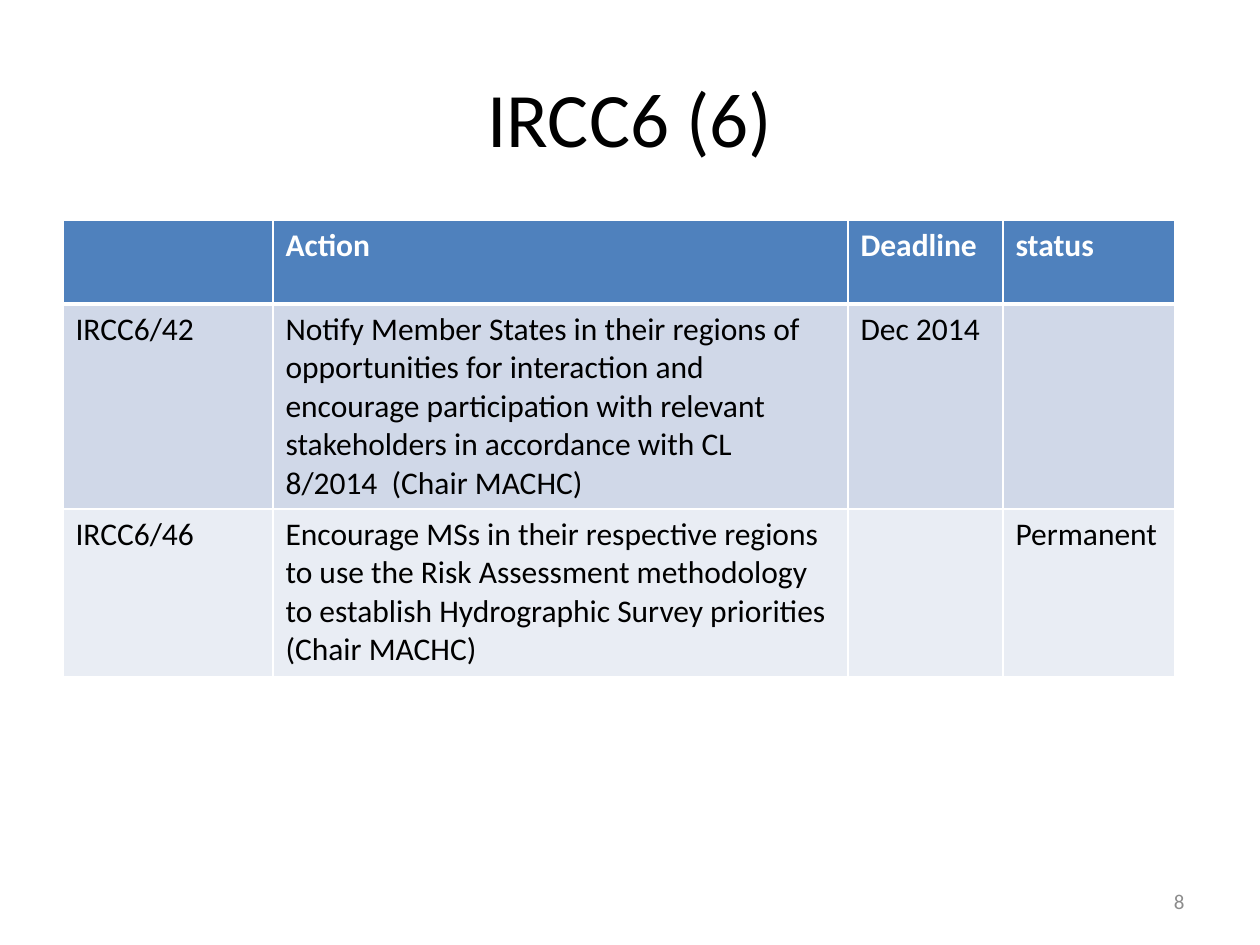
import pptx
import pptx.util
import pptx.dml.color
import pptx.enum.text
import pptx.oxml
import pptx.oxml.ns

RGB = pptx.dml.color.RGBColor
ALIGN = pptx.enum.text.PP_ALIGN
MIDDLE = pptx.enum.text.MSO_ANCHOR.MIDDLE
PX = 914400 / 126

BLACK = RGB(0x00, 0x00, 0x00)
WHITE = RGB(0xFF, 0xFF, 0xFF)
GREY = RGB(0x8C, 0x8C, 0x8C)
HEADER_BLUE = RGB(0x4F, 0x81, 0xBD)
BANDS = [RGB(0xD0, 0xD8, 0xE8), RGB(0xE9, 0xED, 0xF4)]

COL_WIDTHS = [210, 575, 155, 172]
ROW_HEIGHTS = [84, 205, 168]
ROWS = [
    ["", "Action", "Deadline", "status"],
    ["IRCC6/42",
     "Notify Member States in their regions of opportunities for interaction "
     "and encourage participation with relevant\n"
     "stakeholders in accordance with CL\n"
     "8/2014  (Chair MACHC)",
     "Dec 2014", ""],
    ["IRCC6/46",
     "Encourage MSs in their respective regions to use the Risk Assessment "
     "methodology to establish Hydrographic Survey priorities\n"
     "(Chair MACHC)",
     "", "Permanent"],
]


def px(n):
    return pptx.util.Emu(round(n * PX))


def place(sp, *box):
    for name, value in zip(("left", "top", "width", "height"), box):
        setattr(sp, name, px(value))


def write(tf, text, size, color, align=ALIGN.LEFT, bold=False):
    tf.text = text
    font = {"name": "Calibri", "size": pptx.util.Pt(size), "bold": bold}
    for p in tf.paragraphs:
        p.alignment = align
        for r in p.runs:
            for name, value in font.items():
                setattr(r.font, name, value)
            r.font.color.rgb = color


def set_borders(cell, widths):
    """Give a cell white borders; widths maps L, R, T, B to points."""
    tc_pr = cell._tc.get_or_add_tcPr()
    for i, (side, width) in enumerate(widths.items()):
        ln = pptx.oxml.parse_xml(
            f'<a:ln{side} {pptx.oxml.ns.nsdecls("a")} w="{pptx.util.Pt(width)}">'
            f'<a:solidFill><a:srgbClr val="{WHITE}"/></a:solidFill></a:ln{side}>')
        tc_pr.insert(i, ln)


def add_title(s, text):
    sp = s.shapes.title
    place(sp, 63, 38, 1134, 157)
    sp.text_frame.vertical_anchor = MIDDLE
    write(sp.text_frame, text, 44, BLACK, ALIGN.CENTER)


def add_action_table(s):
    table = s.shapes.add_table(
        len(ROWS), len(COL_WIDTHS), px(63), px(220),
        px(sum(COL_WIDTHS)), px(sum(ROW_HEIGHTS))).table
    for column, width in zip(table.columns, COL_WIDTHS):
        column.width = px(width)
    for i, (row, height) in enumerate(zip(ROWS, ROW_HEIGHTS)):
        table.rows[i].height = px(height)
        header = i == 0
        for j, text in enumerate(row):
            cell = table.cell(i, j)
            write(cell.text_frame, text, 18, WHITE if header else BLACK, bold=header)
            cell.fill.solid()
            cell.fill.fore_color.rgb = HEADER_BLUE if header else BANDS[(i - 1) % 2]
            # The line under the header is thicker
            set_borders(cell, {"L": 1, "R": 1, "T": 3 if i == 1 else 1,
                               "B": 3 if header else 1})


def add_page_number(s, number):
    tf = s.shapes.add_textbox(px(903), px(876), px(294), px(50)).text_frame
    tf.word_wrap = True
    tf.vertical_anchor = MIDDLE
    write(tf, number, 12, GREY, ALIGN.RIGHT)


def main():
    prs = pptx.Presentation()
    prs.slide_width, prs.slide_height = px(1260), px(945)
    s = prs.slides.add_slide(prs.slide_layouts[5])
    add_title(s, "IRCC6 (6)")
    add_action_table(s)
    add_page_number(s, "8")
    prs.save("out.pptx")


if __name__ == "__main__":
    main()
